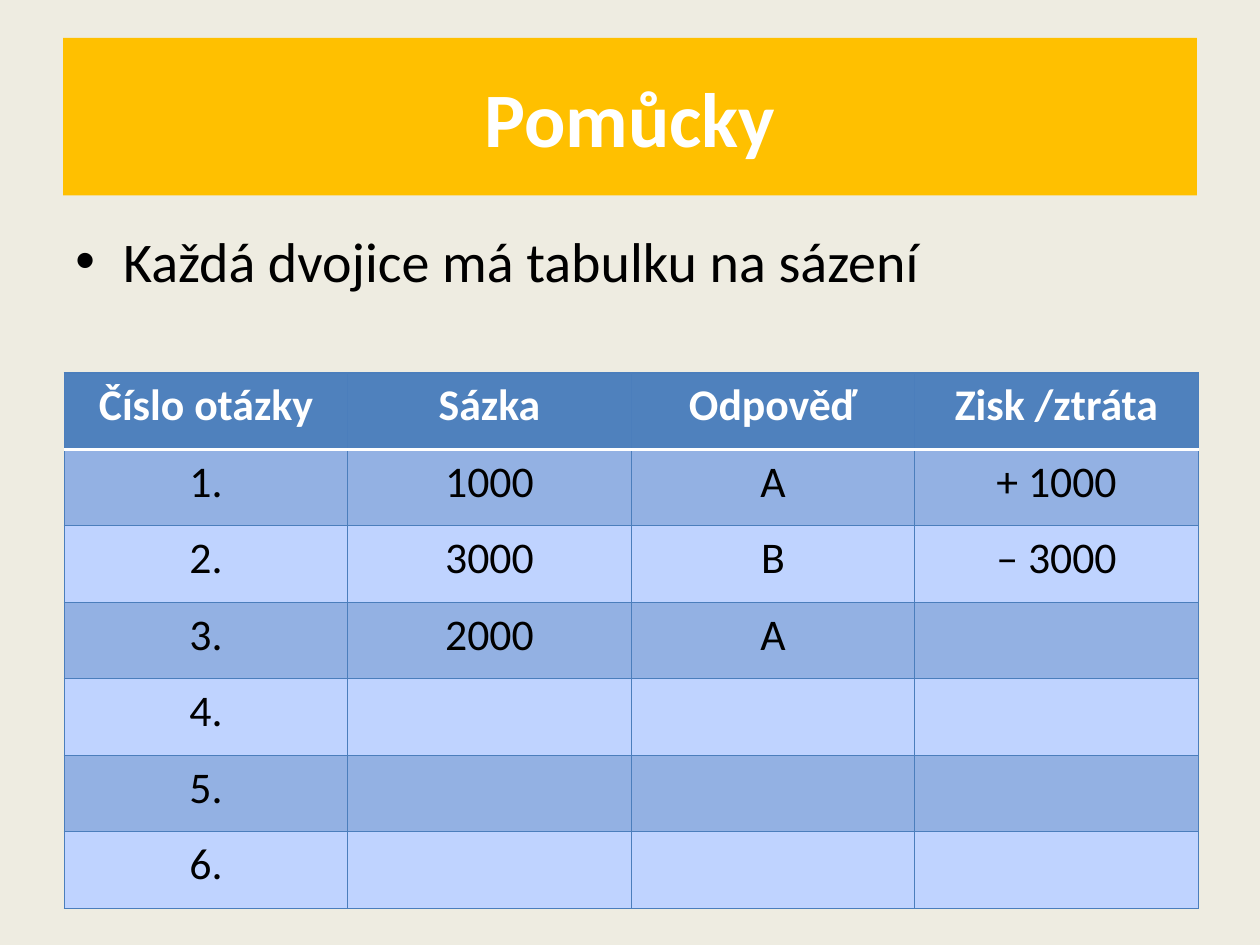
"""Build the "Pomůcky" slide with a betting table."""
from dataclasses import dataclass

from lxml import etree
from pptx import Presentation
from pptx.dml.color import RGBColor
from pptx.enum.text import MSO_ANCHOR, PP_ALIGN
from pptx.oxml.ns import qn
from pptx.util import Inches, Pt

LEFT, CENTER = PP_ALIGN.LEFT, PP_ALIGN.CENTER
MIDDLE = MSO_ANCHOR.MIDDLE


@dataclass(frozen=True)
class Theme:
    font: str = "Calibri"
    background: str = "EEECE1"
    title_fill: str = "FFC000"
    header_fill: str = "4F81BD"
    dark_band: str = "93B1E3"
    light_band: str = "BFD3FF"
    border: str = "4B7EBC"
    white: str = "FFFFFF"
    black: str = "000000"
    title_size: int = 44
    body_size: int = 32
    table_size: int = 25


theme = Theme()


def write_text(frame, text, size, color, bold=False, align=LEFT):
    para = frame.paragraphs[0]
    para.alignment = align
    span = para.add_run()
    span.text = text
    span.font.name = theme.font
    span.font.size = Pt(size)
    span.font.bold = bold
    span.font.color.rgb = RGBColor.from_string(color)
    return para


def add_border(cell, side, color, width):
    properties = cell._tc.get_or_add_tcPr()
    line = etree.SubElement(properties, qn(f"a:ln{side}"), w=str(Pt(width)))
    fill = etree.SubElement(line, qn("a:solidFill"))
    etree.SubElement(fill, qn("a:srgbClr"), val=color)


deck = Presentation()
deck.slide_width, deck.slide_height = Inches(10), Inches(7.5)
page = deck.slides.add_slide(deck.slide_layouts.get_by_name("Title Only"))
page.background.fill.solid()
page.background.fill.fore_color.rgb = RGBColor.from_string(theme.background)

title = page.shapes.title
title.left, title.top = Inches(0.5), Inches(0.3)
title.width, title.height = Inches(9), Inches(1.25)
title.fill.solid()
title.fill.fore_color.rgb = RGBColor.from_string(theme.title_fill)
title.text_frame.vertical_anchor = MIDDLE
write_text(title.text_frame, "Pomůcky", theme.title_size, theme.white,
           bold=True, align=CENTER)

body = page.shapes.add_textbox(Inches(0.5), Inches(1.75), Inches(9), Inches(0.82))
body.text_frame.word_wrap = True
bullet_para = write_text(body.text_frame, "Každá dvojice má tabulku na sázení",
                         theme.body_size, theme.black)
bullet_format = bullet_para._p.get_or_add_pPr()
bullet_format.set("marL", str(Inches(0.38)))
bullet_format.set("indent", str(-Inches(0.38)))
etree.SubElement(bullet_format, qn("a:buFont"), typeface="Arial")
etree.SubElement(bullet_format, qn("a:buChar"), char="•")

rows = [
    ["Číslo otázky", "Sázka", "Odpověď", "Zisk /ztráta"],
    ["1.", "1000", "A", "+ 1000"],
    ["2.", "3000", "B", "– 3000"],
    ["3.", "2000", "A", ""],
    ["4.", "", "", ""],
    ["5.", "", "", ""],
    ["6.", "", "", ""],
]
table = page.shapes.add_table(len(rows), len(rows[0]), Inches(0.51), Inches(2.96),
                              Inches(9), Inches(4.25)).table

for row_index, row in enumerate(rows):
    is_header = row_index == 0
    band = theme.dark_band if row_index % 2 else theme.light_band
    for column_index, text in enumerate(row):
        cell = table.cell(row_index, column_index)
        for side in "LRTB":
            if (row_index, side) in ((0, "B"), (1, "T")):
                add_border(cell, side, theme.white, 2)
            else:
                add_border(cell, side, theme.border, 0.75)
        cell.fill.solid()
        cell.fill.fore_color.rgb = RGBColor.from_string(
            theme.header_fill if is_header else band)
        if text:
            write_text(cell.text_frame, text, theme.table_size,
                       theme.white if is_header else theme.black,
                       bold=is_header, align=CENTER)

deck.save("out.pptx")
